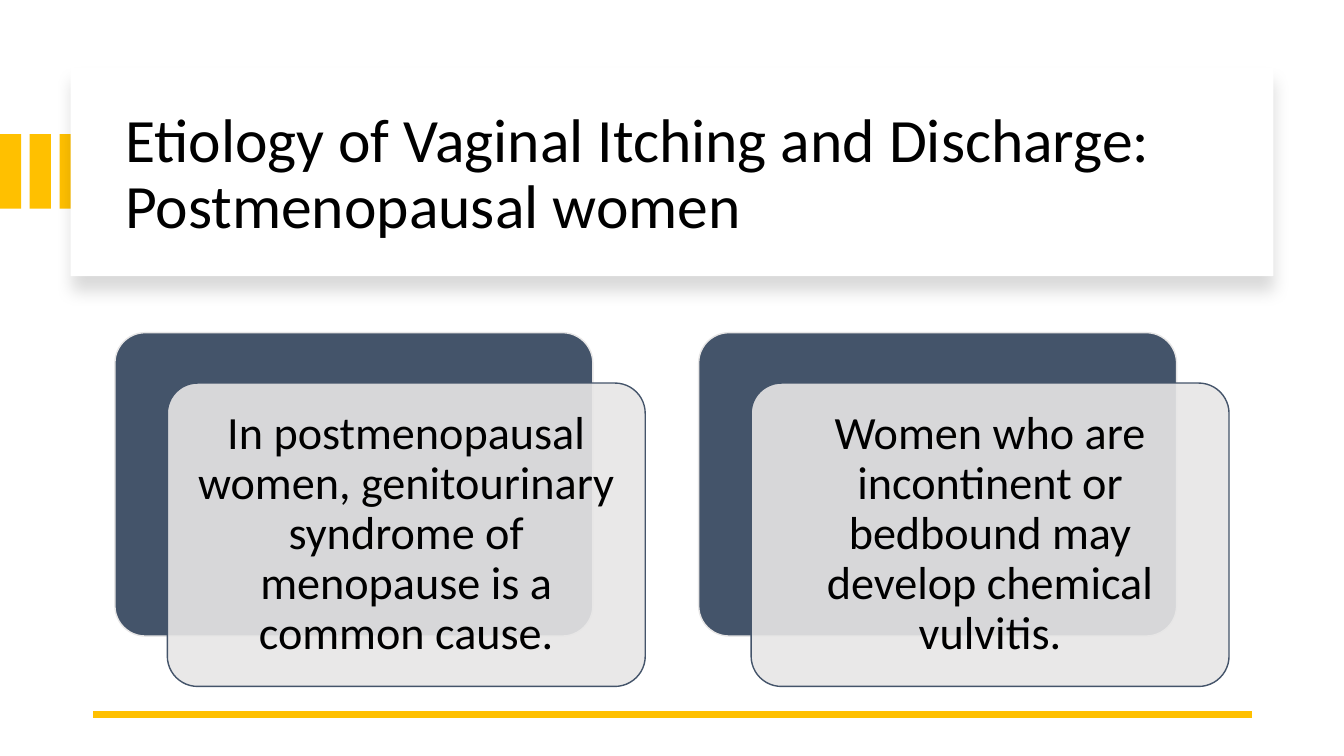
from lxml import etree
from pptx import Presentation
from pptx.dml.color import RGBColor
from pptx.enum import shapes as sh, text as tx
from pptx.oxml import parse_xml
from pptx.oxml.ns import nsdecls, qn
from pptx.util import Inches, Pt

TITLE = "Etiology of Vaginal Itching and Discharge:\nPostmenopausal women"
CAUSES = [
    "In postmenopausal women, genitourinary syndrome of menopause is a common cause.",
    "Women who are incontinent or bedbound may develop chemical vulvitis.",
]
GOLD, NAVY, GRAY, WHITE, BLACK = "FFC000", "44546A", "E7E6E6", "FFFFFF", "000000"
RECT, ROUND = sh.MSO_SHAPE.RECTANGLE, sh.MSO_SHAPE.ROUNDED_RECTANGLE
LEFT, CENTER = tx.PP_ALIGN.LEFT, tx.PP_ALIGN.CENTER


def color(code):
    return RGBColor.from_string(code)


def write(shape, words, size, align, inset):
    frame = shape.text_frame
    frame.word_wrap = True
    frame.auto_size = tx.MSO_AUTO_SIZE.NONE
    frame.vertical_anchor = tx.MSO_ANCHOR.MIDDLE
    frame.margin_left = frame.margin_right = Inches(inset[0])
    frame.margin_top = frame.margin_bottom = Inches(inset[1])
    para = frame.paragraphs[0]
    para.text = words
    para.alignment = align
    para.line_spacing = 0.9
    for run in para.runs:
        run.font.name = "Calibri"
        run.font.size = Pt(size)
        run.font.color.rgb = color(BLACK)


def block(slide, kind, box, fill, line=None, alpha=None):
    shape = slide.shapes.add_shape(kind, *map(Inches, box))
    shape.shadow.inherit = False
    shape.fill.solid()
    shape.fill.fore_color.rgb = color(fill)
    if alpha:
        tone = shape.fill._xPr.find(".//" + qn("a:srgbClr"))
        etree.SubElement(tone, qn("a:alpha")).set("val", str(alpha * 1000))
    if line:
        shape.line.color.rgb = color(line)
        shape.line.width = Pt(1)
    else:
        shape.line.fill.background()
    if kind == ROUND:
        shape.adjustments[0] = 0.1
    return shape


def shade(shape, blur, dist, alpha):
    effect = shape._element.spPr.find(qn("a:effectLst"))
    effect.append(parse_xml(
        f'<a:outerShdw {nsdecls("a")} blurRad="{Pt(blur)}" dist="{Pt(dist)}" '
        f'dir="5400000" algn="t" rotWithShape="0"><a:srgbClr val="{BLACK}">'
        f'<a:alpha val="{alpha * 1000}"/></a:srgbClr></a:outerShdw>'))


def main():
    deck = Presentation()
    deck.slide_width, deck.slide_height = Inches(13.33), Inches(7.5)
    slide = deck.slides.add_slide(deck.slide_layouts[5])

    for i in range(3):
        block(slide, RECT, (i * 0.295, 1.33, 0.21, 0.74), GOLD)
    panel = block(slide, RECT, (0.7, 0.67, 11.93, 2.07), WHITE)
    shade(panel, blur=11, dist=10, alpha=15)

    title = slide.shapes.title
    title.left, title.top, title.width, title.height = map(
        Inches, (1.14, 0.89, 11.13, 1.7))
    write(title, TITLE, 44, LEFT, (0.1, 0.05))
    slide.shapes._spTree.append(title._element)

    rule = slide.shapes.add_connector(
        sh.MSO_CONNECTOR.STRAIGHT, *map(Inches, (12.42, 7.09, 0.92, 7.09)))
    rule.line.color.rgb = color(GOLD)
    rule.line.width = Pt(4.5)
    etree.SubElement(rule._element.spPr, qn("a:effectLst"))

    wide, high = 4.74, 3.01
    for i, cause in enumerate(CAUSES):
        x, y = 1.14 + i * 5.79, 3.3
        block(slide, ROUND, (x, y, wide, high), NAVY, GRAY)
        card = block(slide, ROUND, (x + 0.52, y + 0.5, wide, high), GRAY, NAVY, 90)
        write(card, cause, 33, CENTER, (0.14, 0.14))

    deck.save("out.pptx")


if __name__ == "__main__":
    main()
